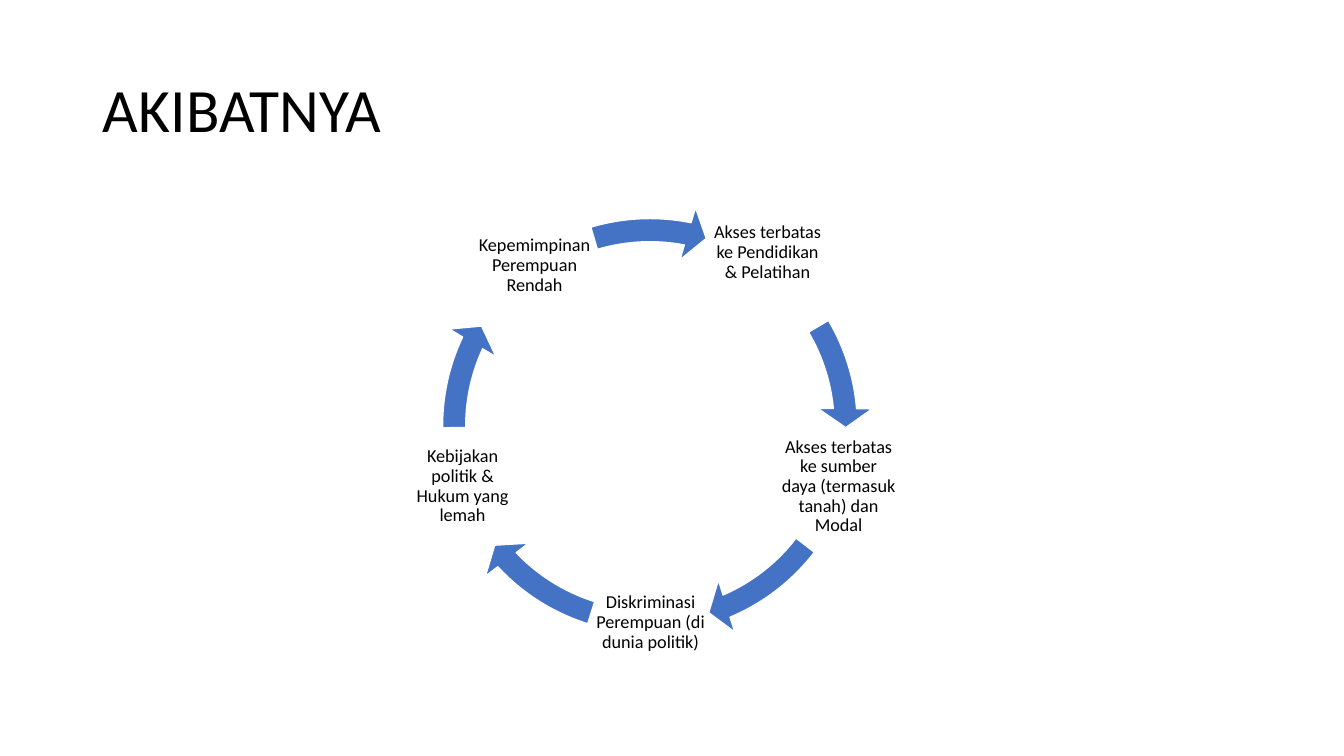
"""Build the AKIBATNYA slide: a title above a cycle of five labels and arrows."""
from pptx import Presentation
from pptx.dml.color import RGBColor
from pptx.enum.shapes import MSO_SHAPE
from pptx.enum.text import MSO_ANCHOR, PP_ALIGN
from pptx.util import Emu, Pt


def px(n):
    return Emu(round(n * 914400 / 100.8))


def color(value):
    return RGBColor.from_string(value)


prs = Presentation()
prs.slide_width, prs.slide_height = px(1344), px(756)
s = prs.slides.add_slide(prs.slide_layouts[6])

LABEL = 119
RING_LEFT, RING_TOP, RING_SIZE = 427, 203, 446
BAND, HEAD_ANGLE, HEAD_WIDTH = 0.052, 5.59, 0.061
DEGREE = 60000 / 100000

texts = [
    ("AKIBATNYA", 93, 40, 1159, 146, 44, PP_ALIGN.LEFT, (10, 5, 10, 5)),
]
steps = [
    ("Akses terbatas ke Pendidikan & Pelatihan", 708, 206, 28, 329.41, 354.92),
    ("Akses terbatas ke sumber daya (termasuk tanah) dan Modal", 779, 427, 2, 37.52, 66.95),
    ("Diskriminasi Perempuan (di dunia politik)", 591, 563, 2, 107.46, 136.89),
    ("Kebijakan politik & Hukum yang lemah", 403, 427, 2, 179.49, 205.09),
    ("Kepemimpinan Perempuan Rendah", 475, 206, 2, 253.43, 281.13),
]

for label, left, top, bottom_inset, start, end in steps:
    texts.append((label, left, top, LABEL, LABEL, 13, PP_ALIGN.CENTER, (2, 2, 2, bottom_inset)))
    sp = s.shapes.add_shape(
        MSO_SHAPE.CIRCULAR_ARROW, px(RING_LEFT), px(RING_TOP), px(RING_SIZE), px(RING_SIZE))
    sp.shadow.inherit = False
    adjustments = (BAND, HEAD_ANGLE * DEGREE, end * DEGREE, start * DEGREE, HEAD_WIDTH)
    for i, value in enumerate(adjustments):
        sp.adjustments[i] = value
    sp.fill.solid()
    sp.fill.fore_color.rgb = color("4472C4")
    sp.line.color.rgb = color("FFFFFF")
    sp.line.width = Pt(1)

for text, left, top, width, height, size, align, insets in texts:
    tf = s.shapes.add_textbox(px(left), px(top), px(width), px(height)).text_frame
    tf.word_wrap = True
    tf.vertical_anchor = MSO_ANCHOR.MIDDLE
    tf.margin_left, tf.margin_top, tf.margin_right, tf.margin_bottom = map(px, insets)
    p = tf.paragraphs[0]
    p.alignment = align
    p.line_spacing = 0.9
    r = p.add_run()
    r.text = text
    r.font.name = "Calibri"
    r.font.size = Pt(size)
    r.font.color.rgb = color("000000")

prs.save("out.pptx")
